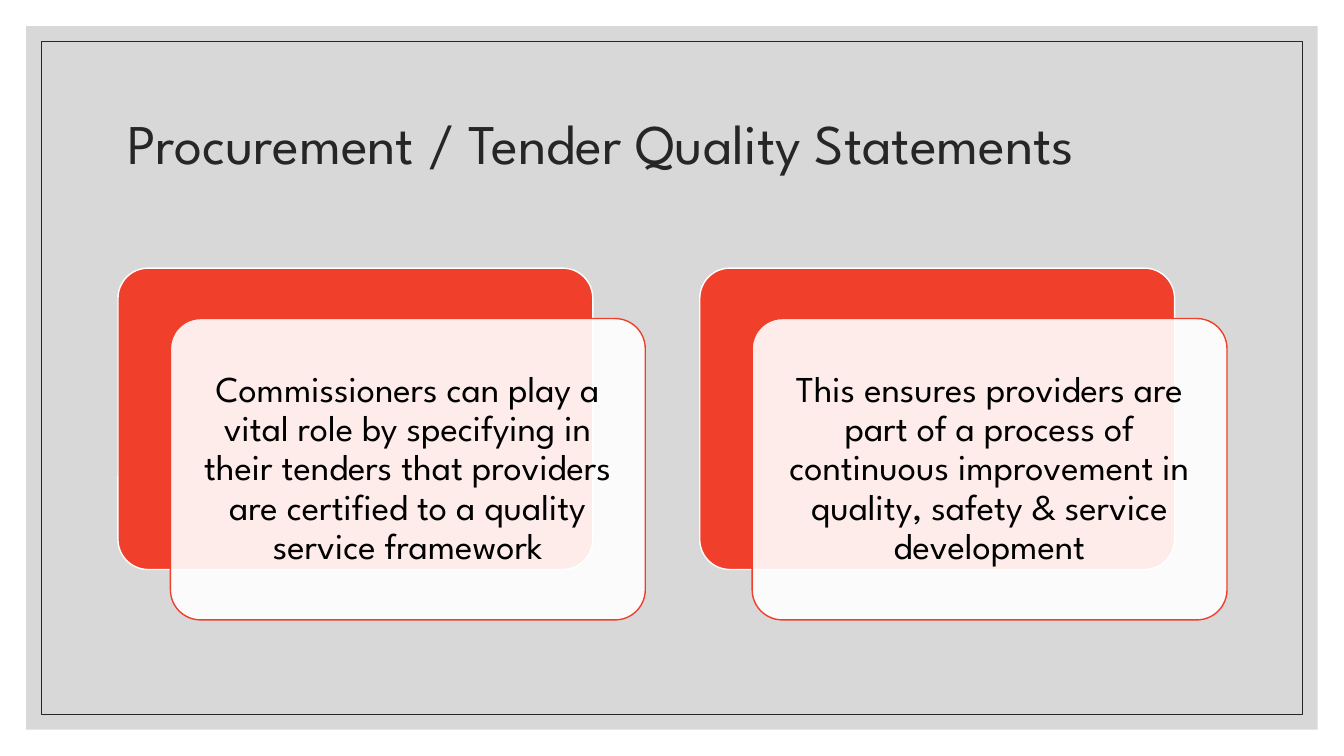
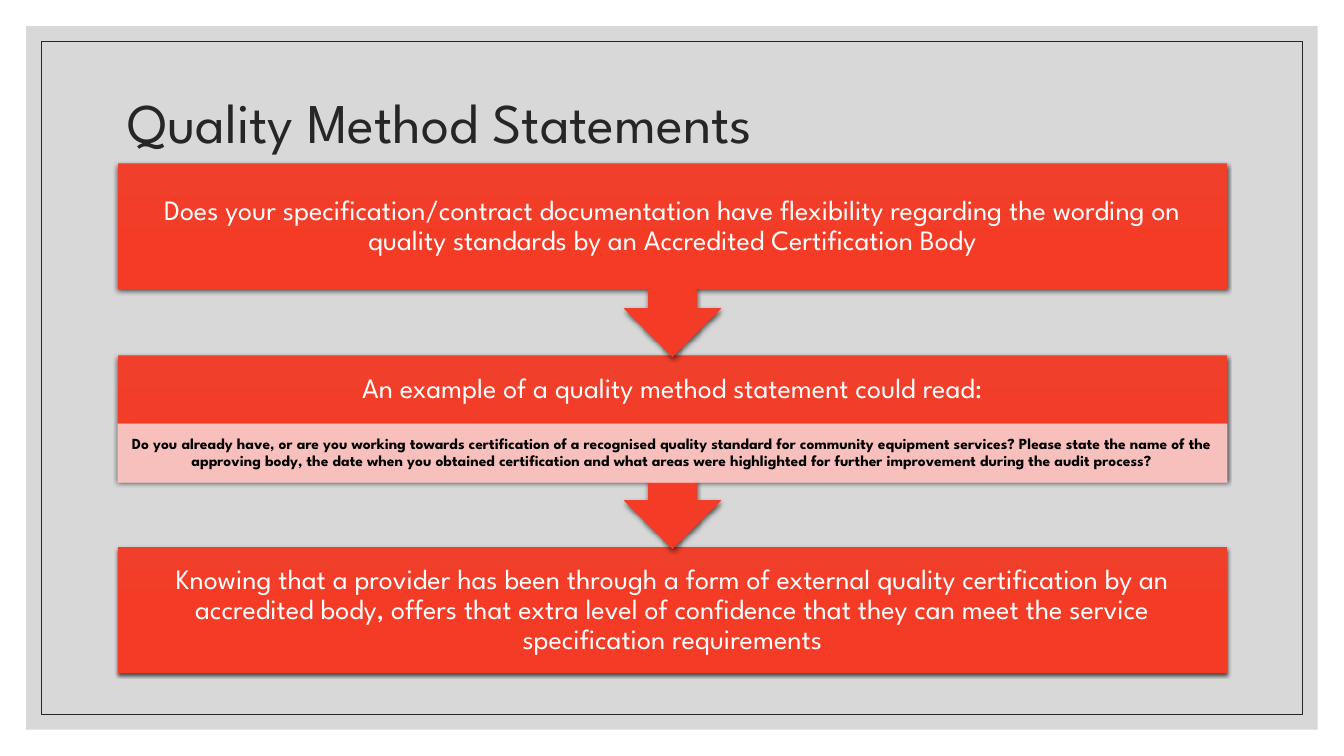
import pptx
import pptx.util
import pptx.dml.color
import pptx.enum.shapes
import pptx.enum.text
import pptx.oxml
import pptx.oxml.ns
import lxml.etree

In, Pt = pptx.util.Inches, pptx.util.Pt
MSO = pptx.enum.shapes.MSO_SHAPE
ALIGN = pptx.enum.text.PP_ALIGN
qn = pptx.oxml.ns.qn

COLORS = {
    "ink": "262626", "grey": "BFBFBF", "red": "F03F2B", "deep_red": "F33B26",
    "pink": "F9CFCD", "white": "FFFFFF", "black": "000000",
}
FONT = "League Spartan"
WIDTH, HEIGHT = 13.33, 7.5
LEFT, CONTENT_W = 1.17, 11

CARDS_TITLE = "Procurement / Tender Quality Statements"
CARDS = [
    "Commissioners can play a vital role by specifying in their tenders that providers are certified to a quality service framework",
    "This ensures providers are part of a process of continuous improvement in quality, safety & service development",
]
STEPS_TITLE = "Quality Method Statements"
STEPS = [
    ("Does your specification/contract documentation have flexibility regarding the wording on quality standards by an Accredited Certification Body", None),
    ("An example of a quality method statement could read:",
     "Do you already have, or are you working towards certification of a recognised quality standard for community equipment services? Please state the name of the approving body, the date when you obtained certification and what areas were highlighted for further improvement during the audit process?"),
    ("Knowing that a provider has been through a form of external quality certification by an accredited body, offers that extra level of confidence that they can meet the service specification requirements", None),
]


def rgb(name):
    return pptx.dml.color.RGBColor.from_string(COLORS[name])


def set_alpha(fill, percent):
    color = fill._xPr.find(qn("a:solidFill"))[0]
    lxml.etree.SubElement(color, qn("a:alpha"), val=str(percent * 1000))


def add_box(s, kind, at, fill=None, alpha=100, line=None, weight=1):
    sp = s.shapes.add_shape(kind, *map(In, at))
    sp.shadow.inherit = False
    if fill:
        sp.fill.solid()
        sp.fill.fore_color.rgb = rgb(fill)
        if alpha < 100:
            set_alpha(sp.fill, alpha)
    else:
        sp.fill.background()
    if line:
        sp.line.color.rgb = rgb(line)
        sp.line.width = Pt(weight)
    else:
        sp.line.fill.background()
    return sp


def write(sp, text, size, color, insets, align=ALIGN.CENTER, bold=False):
    tf = sp.text_frame
    tf.word_wrap = True
    tf.vertical_anchor = pptx.enum.text.MSO_ANCHOR.MIDDLE
    for side, inset in zip(("left", "top", "right", "bottom"), insets):
        setattr(tf, "margin_" + side, In(inset))
    p = tf.paragraphs[0]
    p.alignment, p.line_spacing = align, 0.9
    r = p.add_run()
    r.text = text
    r.font.color.rgb = rgb(color)
    for name, value in {"name": FONT, "size": Pt(size), "bold": bold}.items():
        setattr(r.font, name, value)


def add_slide(prs, title, title_h):
    s = prs.slides.add_slide(prs.slide_layouts[6])
    for margin, style in ((0.26, {"fill": "grey", "alpha": 60}),
                          (0.41, {"line": "ink", "weight": 0.5})):
        add_box(s, MSO.RECTANGLE,
                (margin, margin, WIDTH - 2 * margin, HEIGHT - 2 * margin), **style)
    sp = s.shapes.add_textbox(*map(In, (LEFT, 0.7, CONTENT_W, title_h)))
    write(sp, title, 40, "ink", (0.1, 0.05, 0.1, 0.05), ALIGN.LEFT)
    return s


def style_step(sp):
    sp.fill.gradient()
    sp.fill.gradient_angle = 270
    for stop, position, color in zip(sp.fill.gradient_stops, (0, 0.5), ("red", "deep_red")):
        stop.position = position
        stop.color.rgb = rgb(color)
    effects = sp._element.spPr.find(qn("a:effectLst"))
    shadow = lxml.etree.SubElement(effects, qn("a:outerShdw"), blurRad=str(Pt(3)),
                                   dist=str(Pt(1)), dir="5400000", rotWithShape="0")
    color = lxml.etree.SubElement(shadow, qn("a:srgbClr"), val=COLORS["black"])
    lxml.etree.SubElement(color, qn("a:alpha"), val="63000")


def build_cards(prs):
    s = add_slide(prs, CARDS_TITLE, 1.5)
    w, h, top, dx, dy = 4.71, 2.99, 2.66, 0.52, 0.5
    pitch = CONTENT_W - w - dx
    for i, text in enumerate(CARDS):
        x = LEFT + i * pitch
        back = add_box(s, MSO.ROUNDED_RECTANGLE, (x, top, w, h), "red", line="white")
        card = add_box(s, MSO.ROUNDED_RECTANGLE, (x + dx, top + dy, w, h),
                       "white", 90, "red")
        for sp in (back, card):
            sp.adjustments[0] = 0.1
        write(card, text, 26, "black", (0.11,) * 4)


def build_steps(prs):
    s = add_slide(prs, STEPS_TITLE, 1.08)
    top, pitch, box_h, callout_h, head_h, pad = 1.62, 1.905, 1.25, 1.92, 0.68, 0.16
    last = len(STEPS) - 1
    for i, (text, detail) in reversed(list(enumerate(STEPS))):
        y = top + i * pitch
        kind, h = (MSO.RECTANGLE, box_h) if i == last else (MSO.DOWN_ARROW_CALLOUT, callout_h)
        sp = add_box(s, kind, (LEFT, y, CONTENT_W, h))
        style_step(sp)
        bottom = pad + (box_h - head_h if detail else 0)
        write(sp, text, 20, "white", (pad, pad, pad, bottom))
        if detail:
            band = add_box(s, MSO.RECTANGLE, (LEFT, y + head_h, CONTENT_W, 0.58),
                           "pink", 90, "pink", 0.5)
            set_alpha(band.line.fill, 90)
            write(band, detail, 11, "black", (0.09, 0.02, 0.09, 0.02), bold=True)


def main():
    prs = pptx.Presentation()
    prs.slide_width, prs.slide_height = In(WIDTH), In(HEIGHT)
    build_cards(prs)
    build_steps(prs)
    prs.save("out.pptx")


if __name__ == "__main__":
    main()
